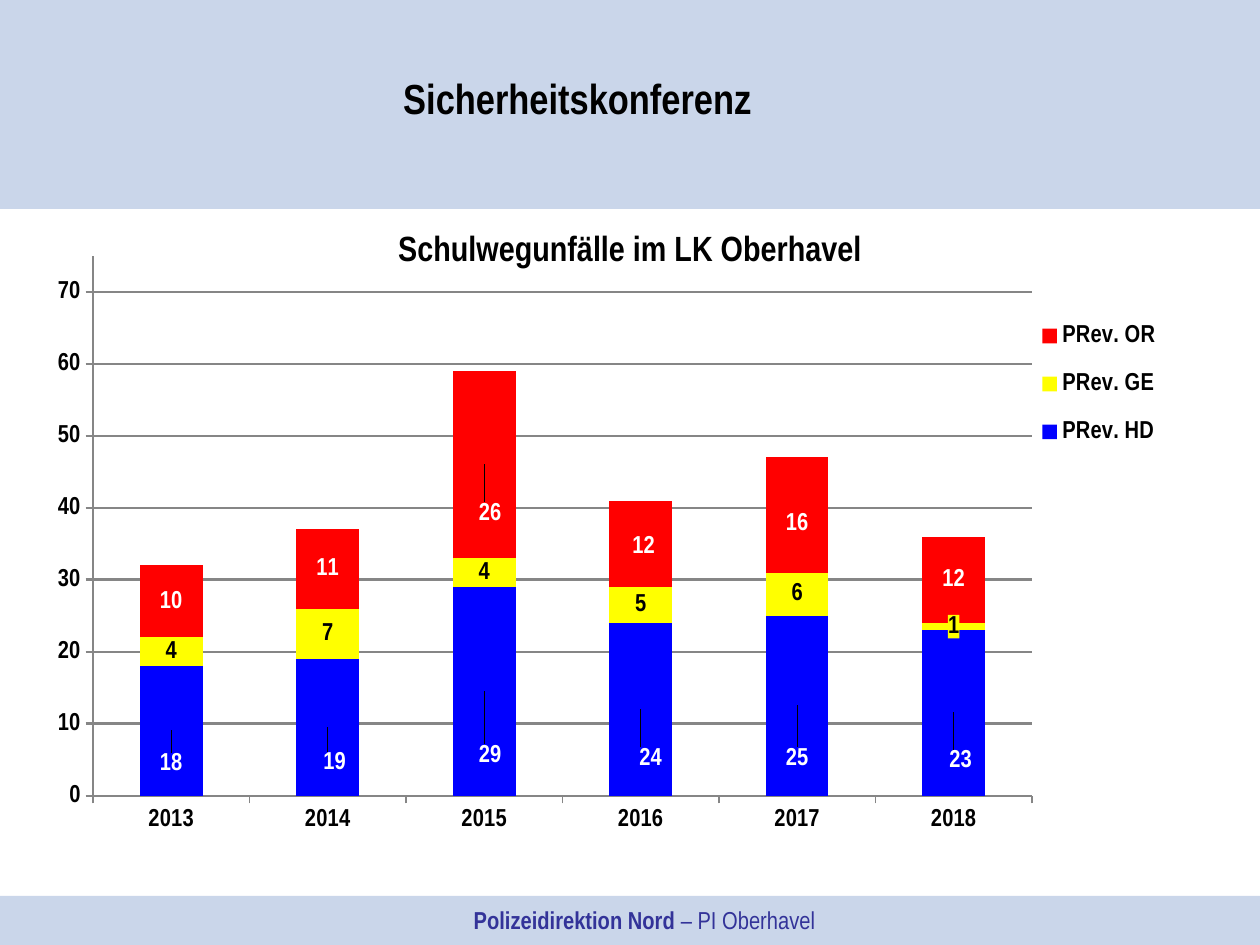
from lxml import etree
from pptx import Presentation
from pptx.chart.data import CategoryChartData
from pptx.dml.color import RGBColor
from pptx.enum.chart import XL_CHART_TYPE, XL_LABEL_POSITION, XL_LEGEND_POSITION, XL_TICK_MARK
from pptx.enum.shapes import MSO_SHAPE
from pptx.enum.text import MSO_ANCHOR, MSO_AUTO_SIZE, PP_ALIGN
from pptx.oxml import parse_xml
from pptx.oxml.ns import nsdecls, qn
from pptx.util import Pt

PX = 914400 // 126
BLACK = RGBColor(0, 0, 0)
WHITE = RGBColor(0xFF, 0xFF, 0xFF)
BAND = RGBColor(0x2E, 0x5D, 0xAD)
NAVY = RGBColor(0x33, 0x33, 0x99)
GRAY = RGBColor(0x86, 0x86, 0x86)
BLUE = RGBColor(0, 0, 0xFF)
YELLOW = RGBColor(0xFF, 0xFF, 0)
RED = RGBColor(0xFF, 0, 0)
CENTER = PP_ALIGN.CENTER
LABEL_CENTER = XL_LABEL_POSITION.CENTER
OUTSIDE = XL_TICK_MARK.OUTSIDE
CHART_W, CHART_H = 1160, 600


def style(font, size, color, bold=True):
    font.name = "Arial Narrow"
    font.size = Pt(size)
    font.bold = bold
    font.color.rgb = color


def layout(x, y, w=None, h=None, inner=False):
    parts = ['<c:layoutTarget val="inner"/>'] if inner else []
    if w:
        parts += ['<c:xMode val="edge"/>', '<c:yMode val="edge"/>']
    for tag, value, total in (("x", x, CHART_W), ("y", y, CHART_H),
                              ("w", w, CHART_W), ("h", h, CHART_H)):
        if value is not None:
            parts.append(f'<c:{tag} val="{value / total:.4f}"/>')
    return parse_xml(f'<c:layout {nsdecls("c")}><c:manualLayout>{"".join(parts)}'
                     '</c:manualLayout></c:layout>')


prs = Presentation()
prs.slide_width, prs.slide_height = 1260 * PX, 945 * PX
slide = prs.slides.add_slide(prs.slide_layouts[5])

for top, height in ((896, 49), (0, 209)):
    sp = slide.shapes.add_shape(MSO_SHAPE.RECTANGLE, 0, top * PX, 1265 * PX, height * PX)
    sp.shadow.inherit = False
    sp.line.fill.background()
    sp.fill.solid()
    sp.fill.fore_color.rgb = BAND
    clr = sp._element.spPr.find(".//" + qn("a:srgbClr"))
    etree.SubElement(clr, qn("a:alpha")).set("val", "25000")

footer = slide.shapes.add_textbox(312 * PX, 895 * PX, 665 * PX, 49 * PX)
tf = footer.text_frame
tf.word_wrap = True
tf.vertical_anchor = MSO_ANCHOR.MIDDLE
tf.margin_left = tf.margin_top = tf.margin_right = tf.margin_bottom = 0
p = tf.paragraphs[0]
p.alignment = CENTER
for text, bold in (("Polizeidirektion Nord", True), (" – PI Oberhavel", False)):
    r = p.add_run()
    r.text = text
    style(r.font, 14, NAVY, bold)

data = CategoryChartData()
data.categories = ["2013", "2014", "2015", "2016", "2017", "2018"]
data.add_series("PRev. HD", (18, 19, 29, 24, 25, 23))
data.add_series("PRev. GE", (4, 7, 4, 5, 6, 1))
data.add_series("PRev. OR", (10, 11, 26, 12, 16, 12))
chart = slide.shapes.add_chart(XL_CHART_TYPE.COLUMN_STACKED, 34 * PX, 244 * PX,
                               CHART_W * PX, CHART_H * PX, data).chart
chart.has_title = False
chart.font.name = "Arial"
chart.font.size = Pt(18)
chart.font.color.rgb = BLACK

plot = chart.plots[0]
plot.gap_width, plot.overlap = 150, 100
plot.vary_by_categories = False
plot_area = chart._chartSpace.find(".//" + qn("c:plotArea"))
old = plot_area.find(qn("c:layout"))
if old is not None:
    plot_area.remove(old)
plot_area.insert(0, layout(59, 12, 939, 540, inner=True))

value_axis, category_axis = chart.value_axis, chart.category_axis
value_axis.minimum_scale, value_axis.maximum_scale = 0, 75
value_axis.major_unit = 10
value_axis.has_major_gridlines = True
for axis in (value_axis, category_axis):
    axis.major_tick_mark = OUTSIDE
    style(axis.tick_labels.font, 14, BLACK)
for line, width in ((value_axis.format.line, 1.5), (category_axis.format.line, 0.75),
                    (value_axis.major_gridlines.format.line, 1.5)):
    line.color.rgb = GRAY
    line.width = Pt(width)

chart.has_legend = True
legend = chart.legend
legend.position = XL_LEGEND_POSITION.RIGHT
legend.include_in_layout = False
style(legend.font, 14, BLACK)
old = legend._element.find(qn("c:layout"))
if old is not None:
    legend._element.remove(old)
legend._element.find(qn("c:legendPos")).addnext(layout(1000, 56, 130, 168))

hd_shifts = {0: (0, 33), 1: (7, 36), 2: (6, 64), 3: (10, 49), 4: (0, 53), 5: (7, 48)}
or_shifts = {2: (6, 49), 3: (3, 3), 4: (0, 9)}
formats = ((BLUE, WHITE, hd_shifts), (YELLOW, BLACK, {}), (RED, WHITE, or_shifts))
for s, (fill, color, shifts) in zip(plot.series, formats):
    s.format.fill.solid()
    s.format.fill.fore_color.rgb = fill
    labels = s.data_labels
    labels.show_value = True
    labels.position = LABEL_CENTER
    style(labels.font, 14, color)
    if fill == YELLOW:
        labels._element.find(qn("c:txPr")).addprevious(parse_xml(
            f'<c:spPr {nsdecls("c", "a")}><a:solidFill><a:srgbClr val="{YELLOW}"/>'
            '</a:solidFill></c:spPr>'))
    for i, shift in shifts.items():
        label = s.points[i].data_label
        label.position = LABEL_CENTER
        style(label.font, 14, color)
        idx = s._element.xpath(f'.//c:dLbl/c:idx[@val="{i}"]')[0]
        idx.addnext(layout(*shift))

heading = slide.shapes.add_textbox(369 * PX, 66 * PX, 417 * PX, 63 * PX)
title = slide.shapes.title
title.left, title.top, title.width, title.height = 0, 185 * PX, 1260 * PX, 90 * PX
title.text_frame.vertical_anchor = MSO_ANCHOR.BOTTOM
for sp, text, size, fit in (
        (heading, "Sicherheitskonferenz", 24, MSO_AUTO_SIZE.SHAPE_TO_FIT_TEXT),
        (title, "Schulwegunfälle im LK Oberhavel", 20, MSO_AUTO_SIZE.NONE)):
    tf = sp.text_frame
    tf.text = text
    tf.word_wrap = True
    tf.auto_size = fit
    p = tf.paragraphs[0]
    p.alignment = CENTER
    style(p.runs[0].font, size, BLACK)

prs.save("out.pptx")
